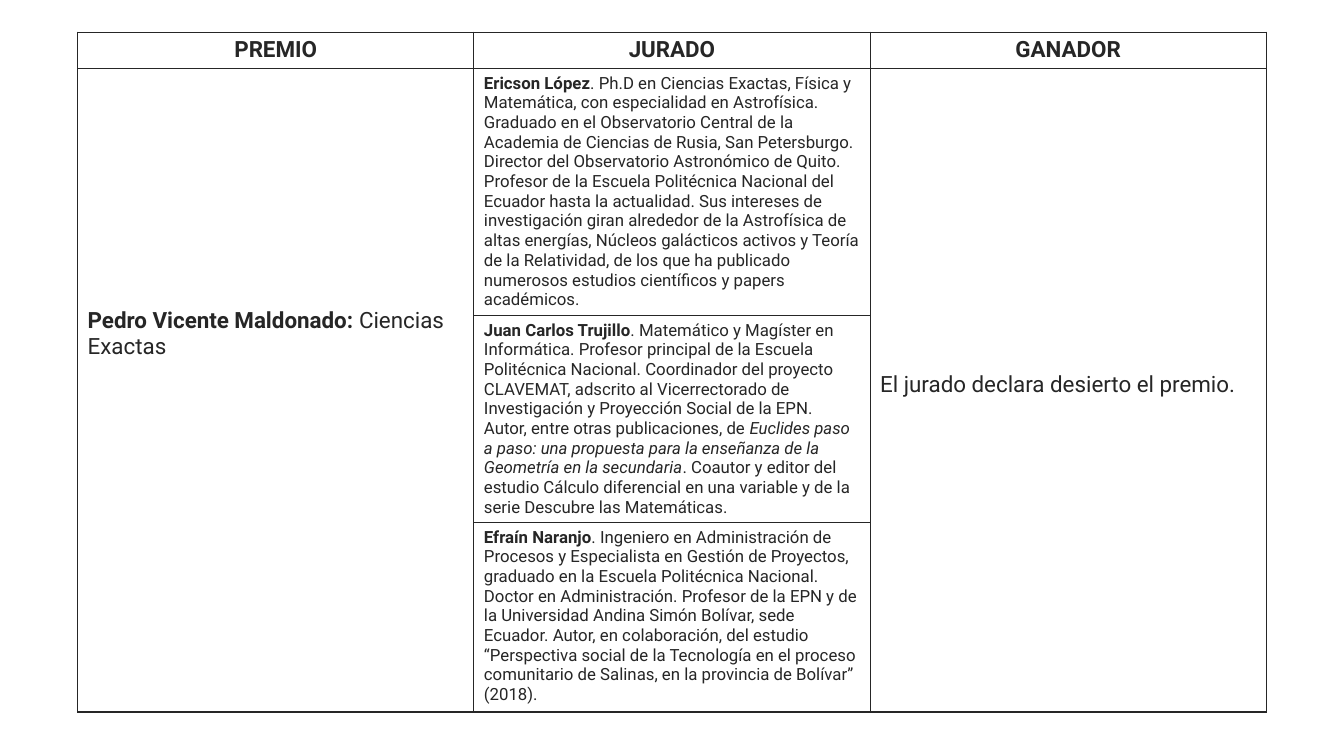
import pptx
import pptx.util
import pptx.dml.color
import pptx.enum.text
import lxml.etree
from pptx.util import Inches

INK = "262626"
NS = "http://schemas.openxmlformats.org/drawingml/2006/main"
ANCHOR = pptx.enum.text.MSO_ANCHOR


def rgb(value):
    return pptx.dml.color.RGBColor.from_string(value)


def write_cell(cell, runs, size):
    """Fill a cell with (text, style) runs, style being "", "b" or "i", and border it."""
    p = cell.text_frame.paragraphs[0]
    for text, style in runs:
        r = p.add_run()
        r.text = text
        r.font.name = "Roboto"
        r.font.size = pptx.util.Pt(size)
        r.font.bold = style == "b"
        r.font.italic = style == "i"
        r.font.color.rgb = rgb(INK)
    props = cell._tc.get_or_add_tcPr()
    for side in ("lnL", "lnR", "lnT", "lnB"):
        line = lxml.etree.SubElement(props, f"{{{NS}}}{side}", w="12700")
        fill = lxml.etree.SubElement(line, f"{{{NS}}}solidFill")
        lxml.etree.SubElement(fill, f"{{{NS}}}srgbClr", val=INK)
    cell.fill.background()


headers = ["PREMIO", "JURADO", "GANADOR"]
jurors = [
    [("Ericson López", "b"),
     (". Ph.D en Ciencias Exactas, Física y Matemática, con especialidad en Astrofísica. "
      "Graduado en el Observatorio Central de la Academia de Ciencias de Rusia, San Petersburgo. "
      "Director del Observatorio Astronómico de Quito. Profesor de la Escuela Politécnica Nacional "
      "del Ecuador hasta la actualidad. Sus intereses de investigación giran alrededor de la "
      "Astrofísica de altas energías, Núcleos galácticos activos y Teoría de la Relatividad, de los "
      "que ha publicado numerosos estudios científicos y papers académicos.", "")],
    [("Juan Carlos Trujillo", "b"),
     (". Matemático y Magíster en Informática. Profesor principal de la Escuela Politécnica "
      "Nacional. Coordinador del proyecto CLAVEMAT, adscrito al Vicerrectorado de Investigación y "
      "Proyección Social de la EPN. Autor, entre otras publicaciones, de ", ""),
     ("Euclides paso a paso: una propuesta para la enseñanza de la Geometría en la secundaria", "i"),
     (". Coautor y editor del estudio Cálculo diferencial en una variable y de la serie Descubre "
      "las Matemáticas.", "")],
    [("Efraín Naranjo", "b"),
     (". Ingeniero en Administración de Procesos y Especialista en Gestión de Proyectos, graduado "
      "en la Escuela Politécnica Nacional. Doctor en Administración. Profesor de la EPN y de la "
      "Universidad Andina Simón Bolívar, sede Ecuador. Autor, en colaboración, del estudio "
      "“Perspectiva social de la Tecnología en el proceso comunitario de Salinas, en la provincia "
      "de Bolívar” (2018).", "")],
]
award = [("Pedro Vicente Maldonado: ", "b"), ("Ciencias Exactas", "")]
winner = [("El jurado declara desierto el premio.", "")]

prs = pptx.Presentation()
prs.slide_width = Inches(13.33)
prs.slide_height = Inches(7.5)
s = prs.slides.add_slide(prs.slide_layouts[6])

row_heights = [0.36, 2.45, 2.05, 1.88]
table = s.shapes.add_table(4, 3, Inches(0.77), Inches(0.32), Inches(11.79),
                           Inches(sum(row_heights))).table
table.first_row = False
table.horz_banding = False
for column in table.columns:
    column.width = Inches(3.93)
for row, height in zip(table.rows, row_heights):
    row.height = Inches(height)

for col, header in enumerate(headers):
    cell = table.cell(0, col)
    write_cell(cell, [(header, "b")], 16)
    cell.text_frame.paragraphs[0].alignment = pptx.enum.text.PP_ALIGN.CENTER

for row, juror in enumerate(jurors, start=1):
    write_cell(table.cell(row, 1), juror, 12)

# The bottom margin lifts the text above the middle of the merged cell
for col, runs, bottom in [(0, award, 1.17), (2, winner, 0.15)]:
    table.cell(1, col).merge(table.cell(3, col))
    for row in (2, 3):
        write_cell(table.cell(row, col), [], 16)
    cell = table.cell(1, col)
    write_cell(cell, runs, 16)
    cell.vertical_anchor = ANCHOR.MIDDLE
    cell.margin_bottom = Inches(bottom)

prs.save("out.pptx")
